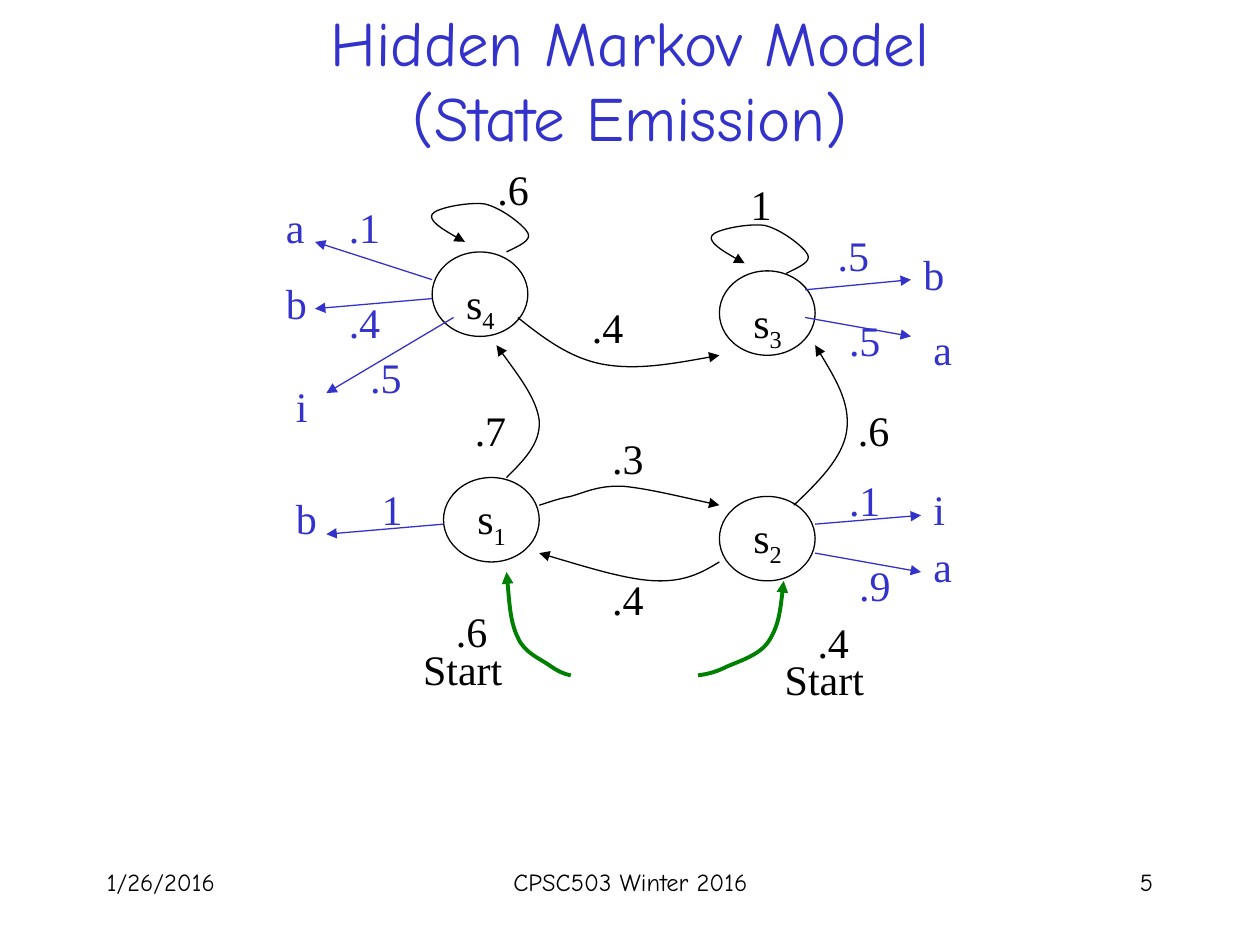
from dataclasses import dataclass
from pptx import Presentation
from pptx.dml.color import RGBColor
from pptx.enum.shapes import MSO_CONNECTOR as Link, MSO_SHAPE as Kind
from pptx.enum.text import MSO_ANCHOR as Anchor, MSO_AUTO_SIZE as Fit, PP_ALIGN as Align
from pptx.oxml.ns import qn
from pptx.util import Inches, Pt
from lxml.etree import SubElement

HUES = {"ink": "000000", "blue": "3333CC", "green": "008000"}
SERIF, HAND = "Times New Roman", "Comic Neue"
WIDTHS = {"i": 0.3, "a": 0.35, "b": 0.37, "1": 0.37, "Start": 0.84}
Point = tuple[float, float]


@dataclass
class State:
    num: str
    at: Point
    text_at: Point


@dataclass
class Label:
    text: str
    at: Point


@dataclass
class Emit:
    start: Point
    end: Point
    sign: Label
    odds: Label


@dataclass
class Curve:
    points: list[Point]  # start, then two controls and an end per bend
    hue: str = "ink"
    width: float = 0.75


def paint(run, font: str, size: float, hue: str) -> None:
    for key, val in {"name": font, "size": Pt(size)}.items():
        setattr(run.font, key, val)
    run.font.color.rgb = RGBColor.from_string(HUES[hue])


def ink(shape, hue: str, width: float, arrow: bool = True) -> None:
    shape.line.color.rgb = RGBColor.from_string(HUES[hue])
    shape.line.width = Pt(width)
    if arrow:
        SubElement(shape.line._get_or_add_ln(), qn("a:tailEnd"), type="triangle")


def write(slide, text: str, at: Point, hue: str = "ink", sub: str = "") -> None:
    wide = 0.45 if sub else WIDTHS.get(text, 0.46)
    box = slide.shapes.add_textbox(*map(Inches, (*at, wide, 0.45)))
    form = {"word_wrap": False, "auto_size": Fit.SHAPE_TO_FIT_TEXT}
    for key, val in form.items():
        setattr(box.text_frame, key, val)
    para = box.text_frame.paragraphs[0]
    for part in filter(None, (text, sub)):
        run = para.add_run()
        run.text = part
        paint(run, SERIF, 24, hue)
    if sub:
        run.font._element.set("baseline", "-25000")


def draw_state(slide, state: State) -> None:
    oval = slide.shapes.add_shape(Kind.OVAL, *map(Inches, (*state.at, 0.76, 0.67)))
    oval.shadow.inherit = False
    oval.fill.background()
    ink(oval, "ink", 0.75, arrow=False)
    write(slide, "s", state.text_at, sub=state.num)


def draw_curve(slide, curve: Curve) -> None:
    spots = [(Inches(x), Inches(y)) for x, y in curve.points]
    pen = slide.shapes.build_freeform(*spots[0])
    pen.add_line_segments(spots[1:], close=False)
    shape = pen.convert_to_shape()
    shape.shadow.inherit = False
    shape.fill.background()
    ink(shape, curve.hue, curve.width)
    # Turn each three straight steps into one cubic bend
    track = next(shape._element.iter(qn("a:path")))
    steps = track.findall(qn("a:lnTo"))
    for i in range(0, len(steps), 3):
        bend = SubElement(track, qn("a:cubicBezTo"))
        for step in steps[i:i + 3]:
            bend.append(step[0])
            track.remove(step)


def draw_emit(slide, emit: Emit) -> None:
    ends = map(Inches, (*emit.start, *emit.end))
    line = slide.shapes.add_connector(Link.STRAIGHT, *ends)
    ink(line, "blue", 0.75)
    SubElement(line._element.spPr, qn("a:effectLst"))
    for label in (emit.sign, emit.odds):
        write(slide, label.text, label.at, "blue")


def draw_foot(slide, text: str, left: float, wide: float, align: Align) -> None:
    box = slide.shapes.add_textbox(*map(Inches, (left, 6.83, wide, 0.5)))
    box.text_frame.word_wrap = True
    para = box.text_frame.paragraphs[0]
    para.alignment = align
    run = para.add_run()
    run.text = text
    paint(run, HAND, 14, "ink")


def draw_title(slide, text: str) -> None:
    title = slide.shapes.title
    place = {"left": 0.75, "top": 0, "width": 8.5, "height": 1.25}
    for key, val in place.items():
        setattr(title, key, Inches(val))
    frame = title.text_frame
    form = {"text": text, "vertical_anchor": Anchor.MIDDLE,
            "word_wrap": True, "auto_size": Fit.NONE}
    for key, val in form.items():
        setattr(frame, key, val)
    para = frame.paragraphs[0]
    para.alignment = Align.CENTER
    for run in para.runs:
        paint(run, HAND, 36, "blue")


STATES = [
    State("4", (3.43, 2), (3.6, 2.15)),
    State("3", (5.71, 2.15), (5.88, 2.3)),
    State("1", (3.52, 3.79), (3.69, 3.86)),
    State("2", (5.71, 3.94), (5.88, 4.01)),
]

# Self loop of s4; the one of s3 is the same, shifted
LOOP = [(4.02, 2), (4.12, 1.95), (4.22, 1.91), (4.19, 1.85), (4.16, 1.79),
        (3.98, 1.65), (3.85, 1.62), (3.73, 1.6), (3.46, 1.65), (3.43, 1.7),
        (3.4, 1.75), (3.54, 1.84), (3.69, 1.92)]

CURVES = [
    Curve(LOOP),
    Curve([(x + 2.22, y + 0.17) for x, y in LOOP]),
    # Moves between states
    Curve([(4.02, 3.79), (4.16, 3.65), (4.29, 3.52), (4.28, 3.34),
           (4.26, 3.17), (4.1, 2.96), (3.94, 2.74)]),
    Curve([(4.11, 2.52), (4.31, 2.68), (4.52, 2.84), (4.78, 2.89),
           (5.05, 2.94), (5.38, 2.88), (5.71, 2.82)]),
    Curve([(6.3, 4.01), (6.5, 3.82), (6.69, 3.63), (6.72, 3.42),
           (6.75, 3.2), (6.61, 2.97), (6.47, 2.74)]),
    Curve([(4.28, 4.01), (4.35, 3.99), (4.42, 3.96), (4.53, 3.94), (4.64, 3.91),
           (4.75, 3.85), (4.95, 3.86), (5.15, 3.88), (5.43, 3.95), (5.71, 4.01)]),
    Curve([(5.71, 4.46), (5.58, 4.54), (5.44, 4.62), (5.2, 4.61),
           (4.97, 4.6), (4.62, 4.49), (4.28, 4.39)]),
    # Starts
    Curve([(4.53, 5.36), (4.48, 5.35), (4.43, 5.33), (4.36, 5.28), (4.29, 5.23),
           (4.16, 5.18), (4.11, 5.06), (4.05, 4.94), (4.04, 4.74), (4.02, 4.54)],
          "green", 2.25),
    Curve([(5.54, 5.36), (5.61, 5.35), (5.67, 5.34), (5.77, 5.29), (5.86, 5.25),
           (6.03, 5.2), (6.1, 5.09), (6.18, 4.97), (6.2, 4.79), (6.22, 4.61)],
          "green", 2.25),
]

LABELS = [
    Label(".6", (3.85, 1.25)), Label("1", (5.86, 1.37)), Label(".7", (3.67, 3.16)),
    Label(".4", (4.6, 2.34)), Label(".6", (6.71, 3.16)), Label(".3", (4.76, 3.38)),
    Label(".4", (4.76, 4.5)), Label(".6", (3.52, 4.76)), Label("Start", (3.26, 5.06)),
    Label(".4", (6.39, 4.84)), Label("Start", (6.13, 5.14)),
]

EMITS = [
    Emit((3.43, 2.22), (2.5, 1.92), Label("a", (2.17, 1.55)), Label(".1", (2.67, 1.55))),
    Emit((3.43, 2.37), (2.5, 2.45), Label("b", (2.17, 2.15)), Label(".4", (2.67, 2.3))),
    Emit((3.6, 2.52), (2.59, 3.12), Label("i", (2.25, 2.97)), Label(".5", (2.84, 2.74))),
    Emit((6.39, 2.3), (7.23, 2.22), Label("b", (7.23, 1.92)), Label(".5", (6.55, 1.77))),
    Emit((6.39, 2.52), (7.23, 2.67), Label("a", (7.31, 2.52)), Label(".5", (6.64, 2.45))),
    Emit((3.52, 4.16), (2.59, 4.24), Label("b", (2.25, 3.86)), Label("1", (2.93, 3.79))),
    Emit((6.47, 4.16), (7.31, 4.09), Label("i", (7.31, 3.79)), Label(".1", (6.64, 3.72))),
    Emit((6.47, 4.39), (7.31, 4.54), Label("a", (7.31, 4.24)), Label(".9", (6.72, 4.39))),
]


def main() -> None:
    deck = Presentation()
    deck.slide_width, deck.slide_height = Inches(10), Inches(7.5)
    slide = deck.slides.add_slide(deck.slide_layouts[5])
    draw_title(slide, "Hidden Markov Model\v(State Emission)")
    draw_foot(slide, "1/26/2016", 0.75, 2.08, Align.LEFT)
    draw_foot(slide, "CPSC503 Winter 2016", 3.42, 3.17, Align.CENTER)
    draw_foot(slide, "5", 7.17, 2.08, Align.RIGHT)
    for draw, parts in ((draw_state, STATES), (draw_curve, CURVES), (draw_emit, EMITS)):
        for part in parts:
            draw(slide, part)
    for label in LABELS:
        write(slide, label.text, label.at)
    deck.save("out.pptx")


if __name__ == "__main__":
    main()
